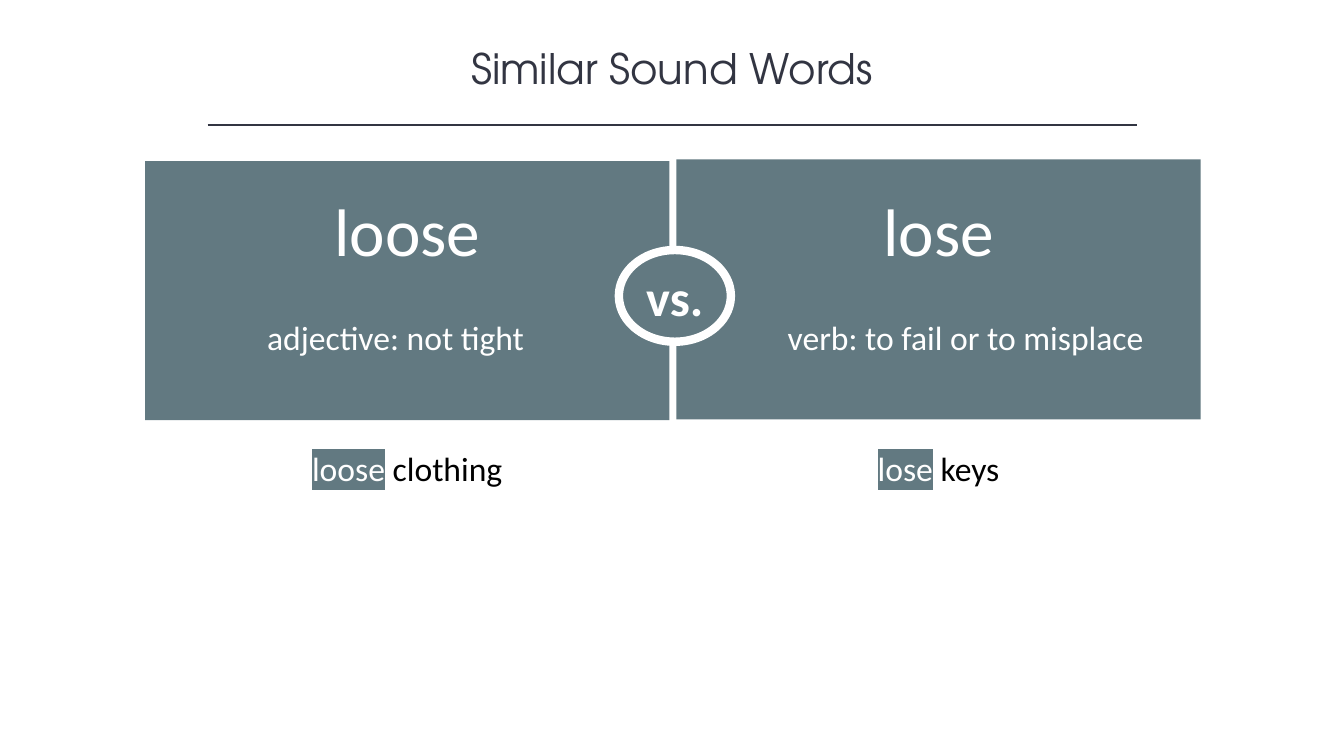
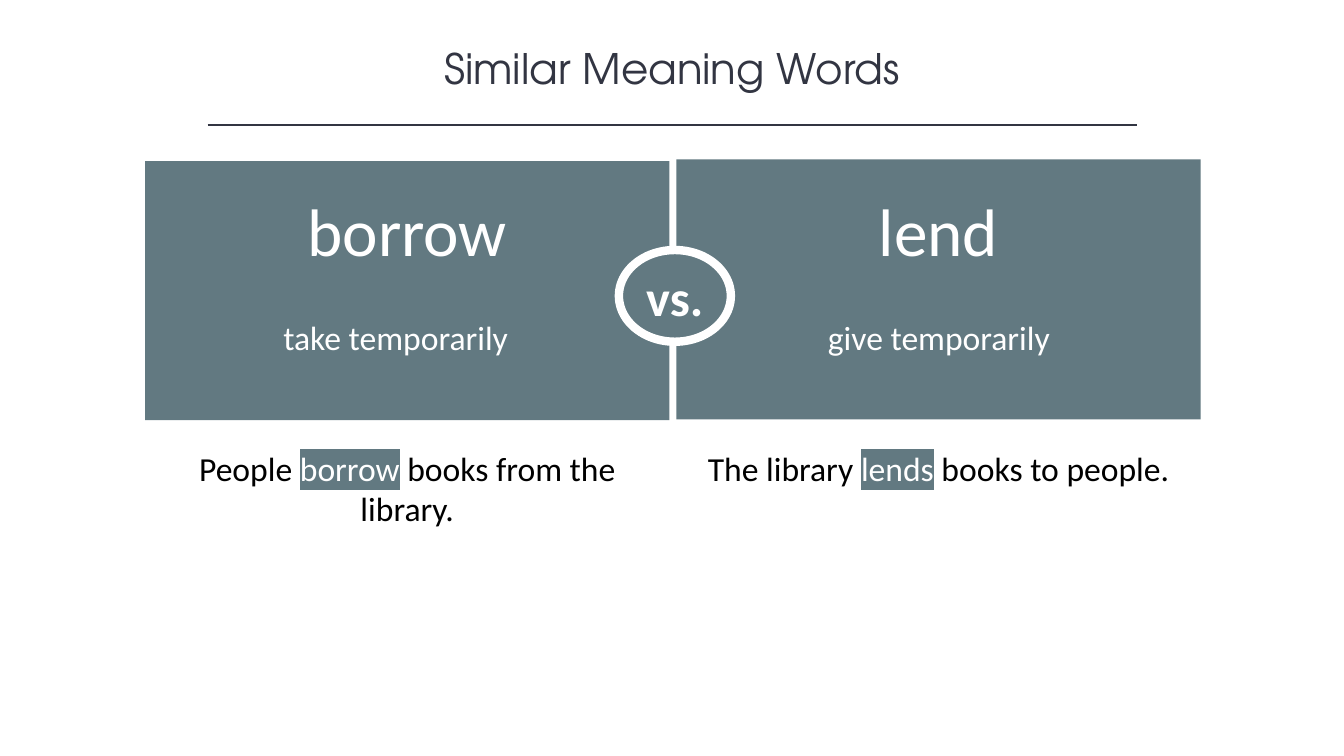
from dataclasses import dataclass
from typing import Any

from lxml import etree
from pptx import Presentation
from pptx import util as u
from pptx.dml.color import RGBColor
from pptx.enum import shapes, text
from pptx.oxml import ns

# Colours and fonts
SLATE = RGBColor(0x62, 0x79, 0x81)
INK = RGBColor(0x32, 0x35, 0x42)
WHITE = RGBColor(0xFF, 0xFF, 0xFF)
BLACK = RGBColor(0x00, 0x00, 0x00)
BODY = "Calibri"

# Text styles
TITLE = {"name": "TeX Gyre Adventor", "size": u.Pt(30), "bold": False}
WORD = {"name": BODY, "size": u.Pt(48)}
PLAIN = {"name": BODY, "size": u.Pt(24)}
VERSUS = {"name": BODY, "size": u.Pt(36), "bold": True}

# Slide size; all lengths below are percent of it
WIDE, HIGH = u.Inches(13.333), u.Inches(7.5)


@dataclass(frozen=True)
class Box:
    x: float
    y: float
    w: float
    h: float

    def place(self) -> tuple[int, ...]:
        sizes = (WIDE, HIGH, WIDE, HIGH)
        shares = (self.x, self.y, self.w, self.h)
        return tuple(round(s * p / 100) for s, p in zip(sizes, shares))


@dataclass(frozen=True)
class Run:
    text: str
    color: RGBColor = WHITE
    marked: bool = False


@dataclass(frozen=True)
class Side:
    word: str
    sense: str
    mid: float  # centre of the sense line
    usage: tuple[Run, ...]


@dataclass(frozen=True)
class Pair:
    title: str
    sides: tuple[Side, Side]


HEAD = Box(12.5, 4.93, 75, 8.13)
RULE = Box(15.45, 16.53, 69.15, 0)
PANELS = (Box(10.8, 21.33, 39, 34.27), Box(50.33, 21.07, 39, 34.4))
BADGE = Box(46.05, 33.07, 8.33, 12.13)
SENSE = 32.25  # width of the sense line

PAIRS = (
    Pair("Similar Sound Words", (
        Side("loose", "adjective: not tight", 29.44,
             (Run("loose", marked=True), Run(" clothing", BLACK))),
        Side("lose", "verb: to fail or to misplace", 71.85,
             (Run("lose", marked=True), Run(" keys", BLACK))),
    )),
    Pair("Similar Meaning Words", (
        Side("borrow", "take temporarily", 29.44,
             (Run("People ", BLACK), Run("borrow", marked=True),
              Run(" books from the library.", BLACK))),
        Side("lend", "give temporarily", 69.86,
             (Run("The library ", BLACK), Run("lends", marked=True),
              Run(" books to people.", BLACK))),
    )),
)


def mark(run: Any) -> None:
    """Highlight a run whose colour is already set."""
    props = run.font._element
    glow = etree.Element(ns.qn("a:highlight"))
    etree.SubElement(glow, ns.qn("a:srgbClr"), val=str(SLATE))
    props.find(ns.qn("a:solidFill")).addnext(glow)


def write(shape: Any, runs: tuple[Run, ...], style: dict[str, Any],
          anchor: Any = text.MSO_ANCHOR.TOP, wrap: bool = True) -> None:
    frame = shape.text_frame
    look = {"word_wrap": wrap, "vertical_anchor": anchor,
            "auto_size": text.MSO_AUTO_SIZE.NONE}
    for key, value in look.items():
        setattr(frame, key, value)
    line = frame.paragraphs[0]
    line.alignment = text.PP_ALIGN.CENTER
    for part in runs:
        run = line.add_run()
        run.text = part.text
        for key, value in style.items():
            setattr(run.font, key, value)
        run.font.color.rgb = part.color
        if part.marked:
            mark(run)


def block(group: Any, kind: Any, box: Box) -> Any:
    shape = group.shapes.add_shape(kind, *box.place())
    shape.shadow.inherit = False
    shape.fill.solid()
    shape.fill.fore_color.rgb = SLATE
    shape.line.fill.background()
    return shape


def header(slide: Any, title: str) -> None:
    head = slide.shapes.title
    for key, value in zip(("left", "top", "width", "height"), HEAD.place()):
        setattr(head, key, value)
    write(head, (Run(title, INK),), TITLE)

    x, y, w, _ = RULE.place()
    rule = slide.shapes.add_connector(shapes.MSO_CONNECTOR.STRAIGHT,
                                      x, y, x + w, y)
    rule.line.color.rgb = INK
    rule.line.width = u.Pt(1)
    etree.SubElement(rule._element.spPr, ns.qn("a:effectLst"))


def panels(slide: Any) -> None:
    group = slide.shapes.add_group_shape()
    for box in PANELS:
        block(group, shapes.MSO_SHAPE.RECTANGLE, box)
    badge = block(group, shapes.MSO_SHAPE.OVAL, BADGE)
    badge.line.color.rgb = WHITE
    badge.line.width = u.Pt(6)
    write(badge, (Run("vs."),), VERSUS, text.MSO_ANCHOR.MIDDLE, wrap=False)


def words(slide: Any, side: Side, panel: Box) -> None:
    middle = text.MSO_ANCHOR.MIDDLE
    top = text.MSO_ANCHOR.TOP
    rows = (
        (Box(side.mid - SENSE / 2, 41.2, SENSE, 6.67),
         (Run(side.sense),), PLAIN, middle),
        (Box(panel.x, 24.4, panel.w, 12.13), (Run(side.word),), WORD, top),
        (Box(panel.x, 58.53, panel.w, 12.13), side.usage, PLAIN, top),
    )
    for box, runs, style, anchor in rows:
        write(slide.shapes.add_textbox(*box.place()), runs, style, anchor)


def main() -> None:
    deck = Presentation()
    deck.slide_width, deck.slide_height = WIDE, HIGH
    layout = deck.slide_layouts.get_by_name("Title Only")
    for pair in PAIRS:
        slide = deck.slides.add_slide(layout)
        header(slide, pair.title)
        panels(slide)
        for side, panel in zip(pair.sides, PANELS):
            words(slide, side, panel)
    deck.save("out.pptx")


if __name__ == "__main__":
    main()
